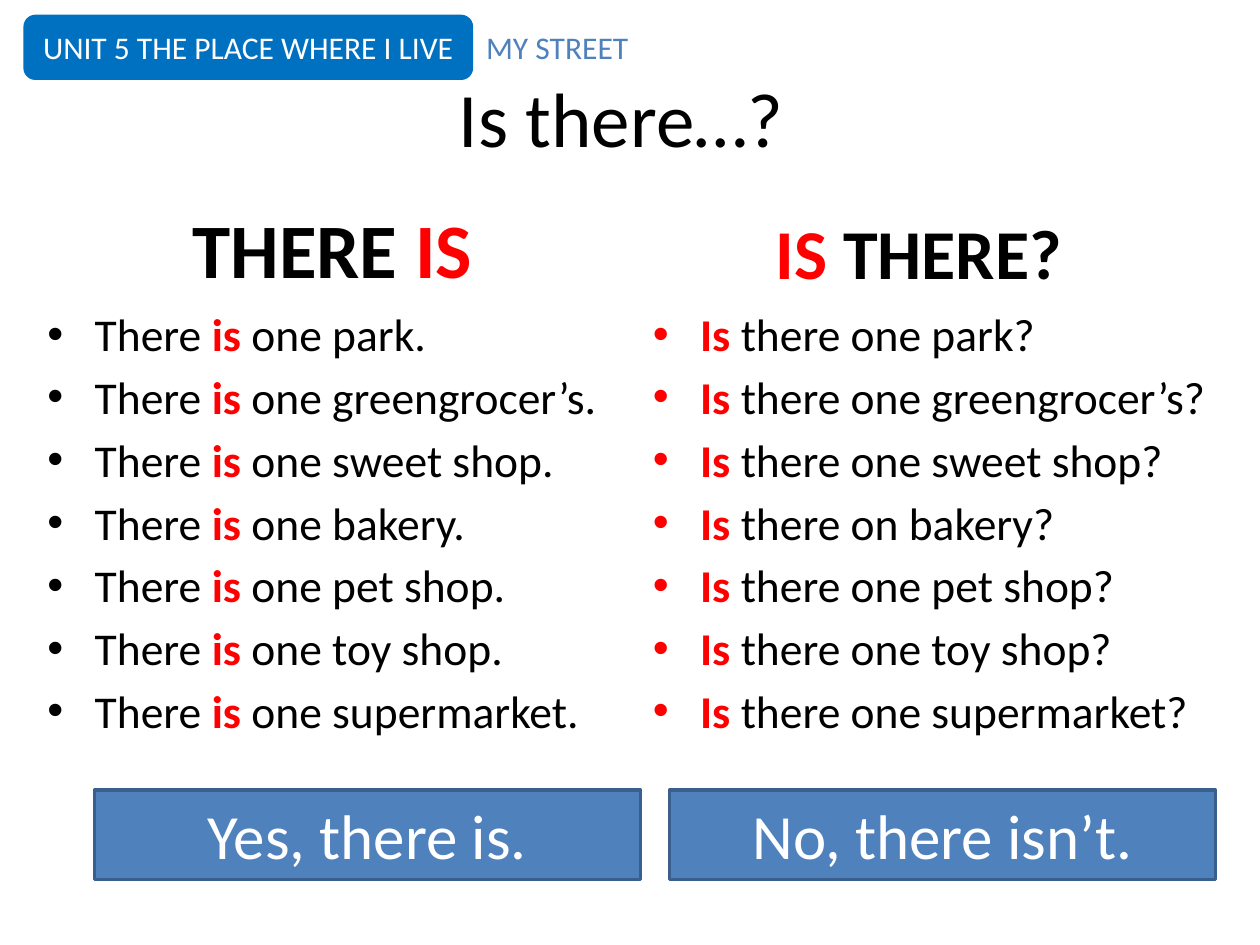
from dataclasses import dataclass

from lxml import etree
from pptx import Presentation
from pptx.dml.color import RGBColor
from pptx.enum.shapes import MSO_SHAPE
from pptx.enum.text import MSO_ANCHOR, PP_ALIGN
from pptx.oxml.ns import qn
from pptx.util import Pt

RECTANGLE, ROUNDED = MSO_SHAPE.RECTANGLE, MSO_SHAPE.ROUNDED_RECTANGLE
TOP, MIDDLE, BOTTOM = MSO_ANCHOR.TOP, MSO_ANCHOR.MIDDLE, MSO_ANCHOR.BOTTOM
LEFT, CENTER = PP_ALIGN.LEFT, PP_ALIGN.CENTER


@dataclass(frozen=True)
class Theme:
    """Hold the colours, font and type sizes of the slide."""
    font: str = "Calibri"
    text: str = "000000"
    accent: str = "FF0000"
    light: str = "FFFFFF"
    blue: str = "4F81BD"
    border: str = "3A5F8C"
    unit: str = "0070C0"
    title: int = 44
    question: int = 40
    answer: int = 36
    body: int = 26
    label: int = 18


THEME = Theme()
PLACES = ["park", "greengrocer’s", "sweet shop", "bakery", "pet shop", "toy shop", "supermarket"]


def plain(text, color=THEME.text, bold=False):
    """Describe one run of text."""
    return text, color, bold


def strong(text):
    """Describe one emphasised run of text."""
    return plain(text, THEME.accent, True)


def add_runs(paragraph, runs, size):
    """Write the described runs into a paragraph."""
    for text, color, bold in runs:
        run = paragraph.add_run()
        run.text = text
        formats = {"name": THEME.font, "size": Pt(size), "bold": bold}
        for name, value in formats.items():
            setattr(run.font, name, value)
        run.font.color.rgb = RGBColor.from_string(color)


def add_bullet(paragraph):
    """Give a paragraph a hanging round bullet."""
    properties = paragraph._p.get_or_add_pPr()
    indent = Pt(27)
    properties.set("marL", str(indent))
    properties.set("indent", str(-indent))
    etree.SubElement(properties, qn("a:buFont")).set("typeface", "Arial")
    etree.SubElement(properties, qn("a:buChar")).set("char", "•")


def fill_frame(shape, paragraphs, size, anchor=MIDDLE, align=CENTER, bullets=False):
    """Set the text of a shape, one list of runs per paragraph."""
    frame = shape.text_frame
    formats = {"word_wrap": True, "vertical_anchor": anchor}
    for name, value in formats.items():
        setattr(frame, name, value)
    for index, runs in enumerate(paragraphs):
        paragraph = frame.add_paragraph() if index else frame.paragraphs[0]
        paragraph.alignment = align
        if bullets:
            paragraph.space_before = Pt(4.7)
            add_bullet(paragraph)
        add_runs(paragraph, runs, size)


def add_text(slide, box, paragraphs, size, **options):
    """Add a text box."""
    shape = slide.shapes.add_textbox(*map(Pt, box))
    fill_frame(shape, paragraphs, size, **options)


def add_panel(slide, kind, box, text, size, fill, border):
    """Add a filled panel with centred light text."""
    shape = slide.shapes.add_shape(kind, *map(Pt, box))
    shape.shadow.inherit = False
    shape.fill.solid()
    shape.fill.fore_color.rgb = RGBColor.from_string(fill)
    shape.line.color.rgb = RGBColor.from_string(border)
    shape.line.width = Pt(2)
    fill_frame(shape, [[plain(text, THEME.light)]], size)


def add_column(slide, heading_left, heading, heading_size, list_left, list_width, sentences):
    """Add a heading with its bulleted sentences."""
    add_text(slide, (heading_left, 121, 318, 50.4), [heading], heading_size, anchor=BOTTOM)
    add_text(slide, (list_left, 171.4, list_width, 311), sentences, THEME.body,
             anchor=TOP, align=LEFT, bullets=True)


def main():
    """Build and save the slide."""
    presentation = Presentation()
    presentation.slide_width, presentation.slide_height = Pt(720), Pt(540)
    slide = presentation.slides.add_slide(presentation.slide_layouts[6])

    add_text(slide, (36, 21.6, 648, 90), [[plain("Is there…? ")]], THEME.title)

    statements = [[plain("There "), strong("is"), plain(f" one {place}.")] for place in PLACES]
    questions = [
        [strong("Is "), plain(f"there {'on' if place == 'bakery' else 'one'} {place}?")]
        for place in PLACES
    ]
    add_column(slide, 36, [plain("THERE", bold=True), strong(" IS ")], THEME.title,
               20, 334, statements)
    add_column(slide, 366, [strong("IS "), plain("THERE?", bold=True)], THEME.question,
               366, 354, questions)

    for left, answer in ((54, "Yes, there is."), (382.5, "No, there isn’t.")):
        add_panel(slide, RECTANGLE, (left, 451.5, 312, 51), answer, THEME.answer,
                  THEME.blue, THEME.border)

    add_text(slide, (270.7, 9.4, 133, 35.3), [[plain("MY STREET", THEME.blue)]],
             THEME.label, align=LEFT)
    add_panel(slide, ROUNDED, (14.4, 9.4, 255, 35.3), "UNIT 5 THE PLACE WHERE I LIVE",
              THEME.label, THEME.unit, THEME.unit)

    presentation.save("out.pptx")


if __name__ == "__main__":
    main()
